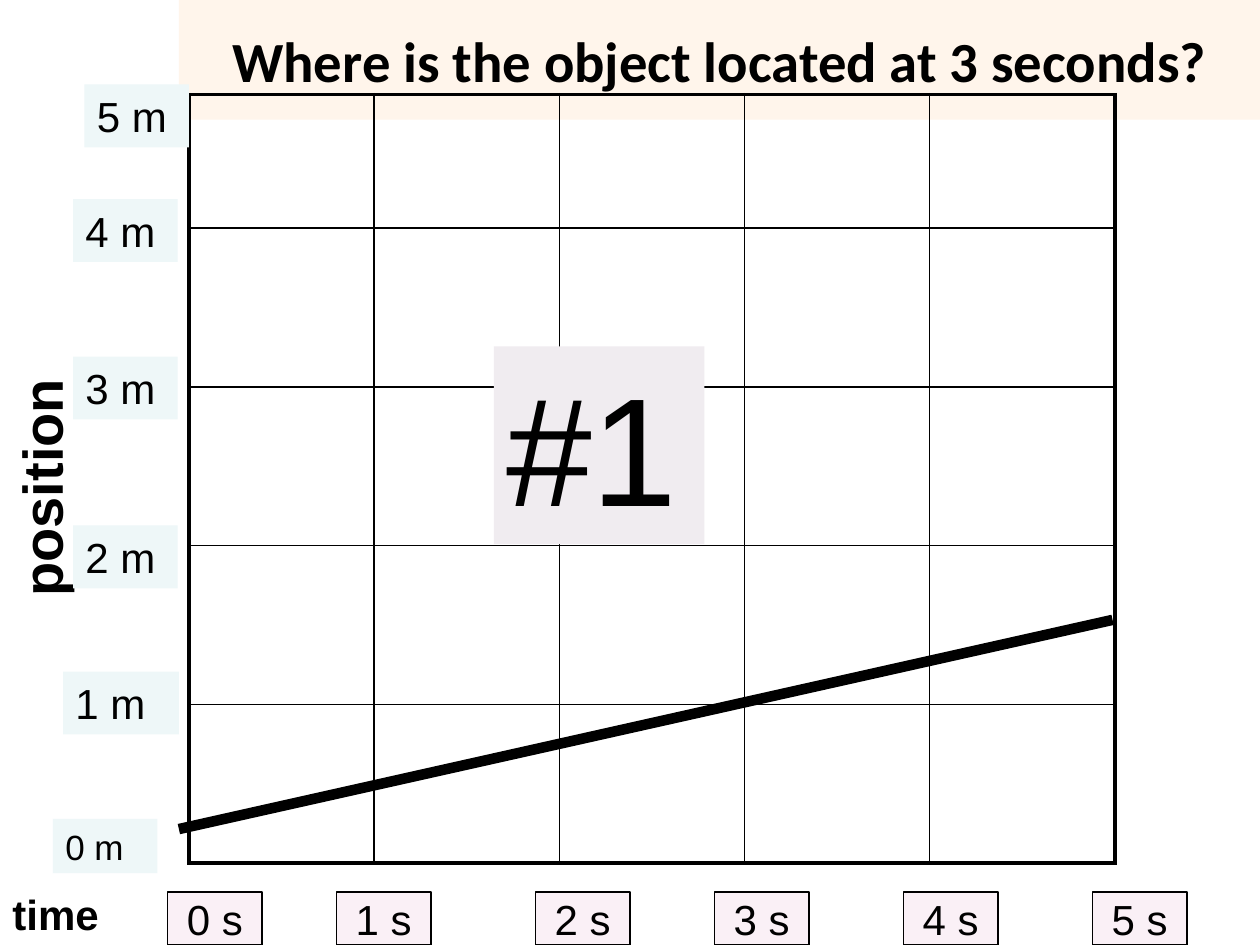
from dataclasses import dataclass

from lxml.etree import SubElement
from pptx import Presentation
from pptx.dml.color import RGBColor
from pptx.enum.shapes import MSO_CONNECTOR as Connector, MSO_SHAPE as Preset
from pptx.enum.text import MSO_ANCHOR as Anchor, MSO_AUTO_SIZE as AutoSize, PP_ALIGN as Align
from pptx.oxml.ns import qn
from pptx.util import Inches, Pt


@dataclass(frozen=True)
class Theme:
    ink: str = "000000"
    title_fill: str = "FFF5EB"
    position_fill: str = "EEF7F8"
    time_fill: str = "FAF0F6"
    number_fill: str = "F0ECF0"
    title_font: str = "Calibri"
    body_font: str = "Arial"
    title_size: float = 32.4
    axis_size: float = 32
    label_size: float = 24
    origin_size: float = 20
    number_size: float = 88
    frame_width: float = 2.25
    grid_width: float = 1
    box_width: float = 0.75
    graph_width: float = 6


THEME = Theme()


@dataclass(frozen=True)
class Label:
    text: str
    left: float
    top: float
    width: float
    height: float
    size: float = THEME.label_size
    fill: str | None = THEME.position_fill
    bold: bool = False
    rotation: float = 0
    boxed: bool = False


AXIS_NAMES = [
    Label("position", -0.68, 3.52, 2, 0.63, THEME.axis_size, None, True, 270),
    Label("time", 0, 7, 1.42, 0.5, fill=None, bold=True),
]
POSITION_LABELS = [
    Label("0 m", 0.42, 6.5, 0.83, 0.43, THEME.origin_size),
    Label("1 m", 0.5, 5.33, 0.92, 0.5),
    Label("2 m", 0.58, 4.17, 0.83, 0.5),
    Label("3 m", 0.58, 2.83, 0.83, 0.5),
    Label("4 m", 0.58, 1.58, 0.83, 0.5),
    Label("5 m", 0.67, 0.67, 0.83, 0.5),
]
TIME_LABELS = [
    Label(f"{second} s", left, 7.08, 0.75, 0.42, fill=THEME.time_fill, boxed=True)
    for second, left in enumerate([1.33, 2.67, 4.25, 5.67, 7.17, 8.67])
]
GRAPH_NUMBER = Label("#1", 3.92, 2.75, 1.67, 1.57, THEME.number_size, THEME.number_fill)


def color(value: str) -> RGBColor:
    return RGBColor.from_string(value)


def format_runs(paragraph, font_name: str, size: float, bold: bool) -> None:
    for run in paragraph.runs:
        run.font.name = font_name
        run.font.size = Pt(size)
        run.font.bold = bold
        run.font.color.rgb = color(THEME.ink)


def draw_title(slide, text: str) -> None:
    title = slide.shapes.title
    title.left, title.top = Inches(1.42), Inches(0)
    title.width, title.height = Inches(8.58), Inches(0.95)
    title.fill.solid()
    title.fill.fore_color.rgb = color(THEME.title_fill)
    frame = title.text_frame
    frame.text = text
    frame.auto_size = AutoSize.NONE
    frame.vertical_anchor = Anchor.MIDDLE
    frame.paragraphs[0].alignment = Align.CENTER
    format_runs(frame.paragraphs[0], THEME.title_font, THEME.title_size, True)


def draw_label(slide, label: Label) -> None:
    area = [Inches(n) for n in (label.left, label.top, label.width, label.height)]
    if label.fill is None:
        shape = slide.shapes.add_textbox(*area)
    else:
        shape = slide.shapes.add_shape(Preset.RECTANGLE, *area)
        shape.shadow.inherit = False
        shape.fill.solid()
        shape.fill.fore_color.rgb = color(label.fill)
        if label.boxed:
            shape.line.color.rgb = color(THEME.ink)
            shape.line.width = Pt(THEME.box_width)
        else:
            shape.line.fill.background()
    shape.rotation = label.rotation
    frame = shape.text_frame
    frame.text = label.text
    frame.word_wrap = not label.boxed
    frame.vertical_anchor = Anchor.MIDDLE if label.boxed else Anchor.TOP
    paragraph = frame.paragraphs[0]
    paragraph.alignment = Align.CENTER if label.boxed else Align.LEFT
    if not label.boxed:
        paragraph.space_before = Pt(label.size * 0.1)
    format_runs(paragraph, THEME.body_font, label.size, label.bold)


def set_borders(cell, outer_sides: dict[str, bool]) -> None:
    properties = cell._tc.get_or_add_tcPr()
    for side, is_outer in outer_sides.items():
        width = THEME.frame_width if is_outer else THEME.grid_width
        border = SubElement(properties, qn(f"a:ln{side}"), w=str(Pt(width)))
        fill = SubElement(border, qn("a:solidFill"))
        SubElement(fill, qn("a:srgbClr"), val=THEME.ink)
    cell.fill.background()


def draw_grid(slide, row_heights: list[float], column_widths: list[float]) -> None:
    rows, columns = len(row_heights), len(column_widths)
    grid = slide.shapes.add_table(
        rows, columns, Inches(1.5), Inches(0.75),
        Inches(sum(column_widths)), Inches(sum(row_heights)),
    ).table
    grid.first_row = grid.horz_banding = False
    for column, width in zip(grid.columns, column_widths):
        column.width = Inches(width)
    for row, height in zip(grid.rows, row_heights):
        row.height = Inches(height)
    for r in range(rows):
        for c in range(columns):
            set_borders(grid.cell(r, c), {
                "L": c == 0, "R": c == columns - 1,
                "T": r == 0, "B": r == rows - 1,
            })


def draw_graph(slide, start: tuple[float, float], end: tuple[float, float]) -> None:
    graph = slide.shapes.add_connector(
        Connector.STRAIGHT, *(Inches(n) for n in start + end)
    )
    graph.line.color.rgb = color(THEME.ink)
    graph.line.width = Pt(THEME.graph_width)
    SubElement(graph._element.spPr, qn("a:effectLst"))


def main() -> None:
    deck = Presentation()
    deck.slide_width, deck.slide_height = Inches(10), Inches(7.5)
    slide = deck.slides.add_slide(deck.slide_layouts[5])
    draw_title(slide, "Where is the object located at 3 seconds?")
    draw_grid(slide, [1.06] + [1.26] * 4, [1.47] * 5)
    for label in AXIS_NAMES + POSITION_LABELS + TIME_LABELS:
        draw_label(slide, label)
    draw_graph(slide, (1.42, 6.58), (8.83, 4.92))
    draw_label(slide, GRAPH_NUMBER)
    deck.save("out.pptx")


if __name__ == "__main__":
    main()
